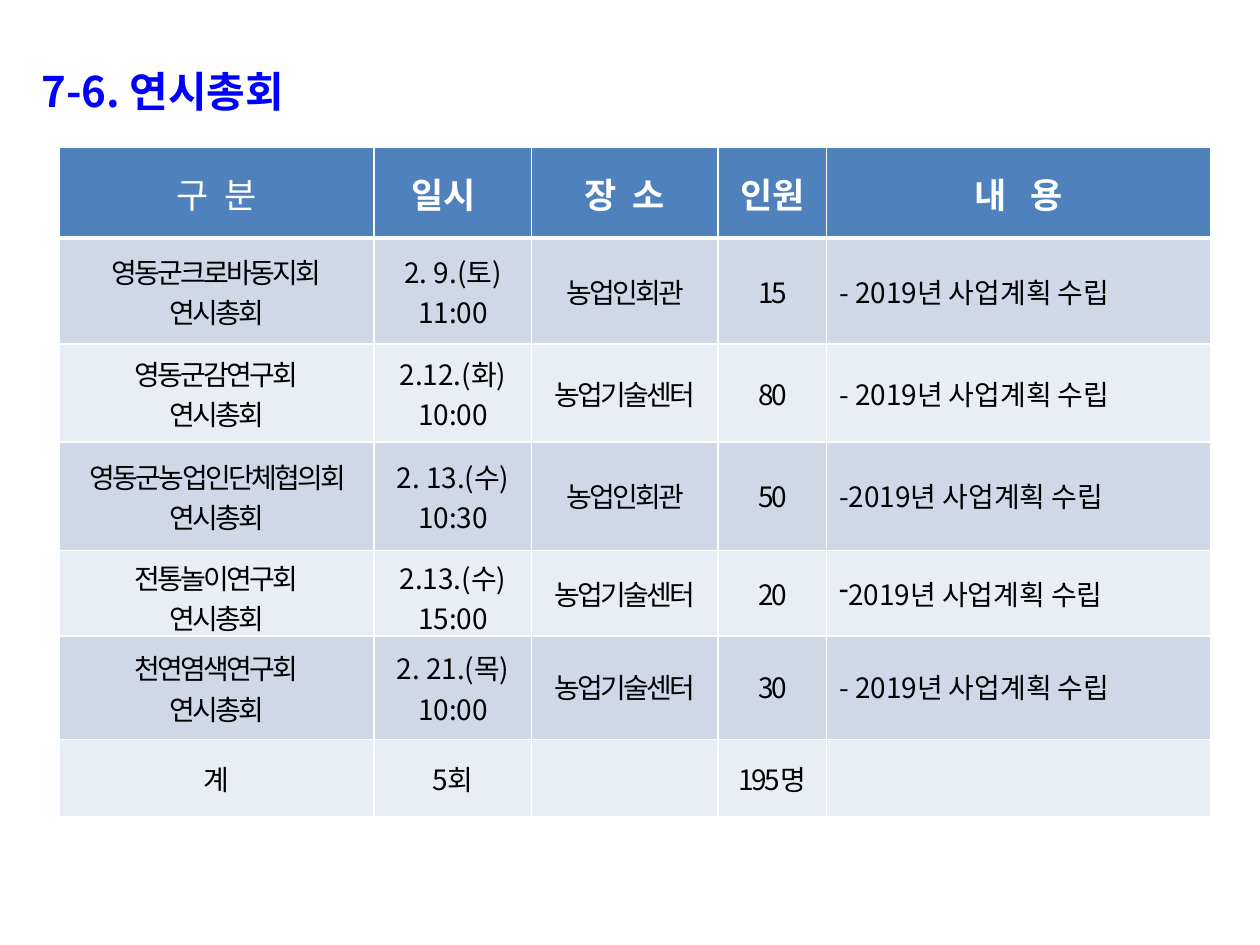
from lxml.etree import SubElement
from pptx import Presentation
from pptx.dml.color import RGBColor
from pptx.enum.text import MSO_ANCHOR, PP_ALIGN
from pptx.oxml.ns import qn
from pptx.util import Inches, Pt

FONT = "Noto Sans CJK KR"
COLUMN_WIDTHS = [2.5, 1.25, 1.48, 0.86, 3.05]
ROW_HEIGHTS = [0.72, 0.84, 0.78, 0.86, 0.68, 0.82, 0.61]
HEADER_FILL = "4F81BD"
BAND_FILLS = ["E9EDF4", "D0D8E8"]
TIGHT = -1.5
DATE_INDENT = 0.38
HALL, CENTER = "농업인회관", "농업기술센터"

# Text and letter spacing in points
HEADERS = [("구 분", 2.2), ("일시", 0), ("장 소", 2.2), ("인원", 0), ("내 용", 4.5)]

# Group, date, place, attendance, agenda, line spacing of the last three
MEETINGS = [
    ("영동군크로바동지회\n연시총회", "2. 9.(토)\n11:00", HALL, "15", "- 2019년 사업계획 수립", None),
    ("영동군감연구회\n연시총회", "2.12.(화)\n10:00", CENTER, "80", "- 2019년 사업계획 수립", None),
    ("영동군농업인단체협의회 연시총회", "2. 13.(수)\n10:30", HALL, "50", "-2019년 사업계획 수립", 0.9),
    ("전통놀이연구회\n연시총회", "2.13.(수)\n15:00", CENTER, "20", "2019년 사업계획 수립", None),
    ("천연염색연구회\n연시총회", "2. 21.(목)\n10:00", CENTER, "30", "- 2019년 사업계획 수립", 0.9),
]
BULLETED_MEETING = 4
TOTALS = ["계", "5회", "", "195명", ""]


def color(hex_value):
    return RGBColor.from_string(hex_value)


def write_text(frame, text, size=16, ink="000000", bold=False, align=PP_ALIGN.LEFT,
               letter_spacing=0, line_spacing=None, hanging=0, bullet=None):
    """Fill a text frame, one paragraph for each line of the text."""
    for index, line in enumerate(text.split("\n")):
        paragraph = frame.add_paragraph() if index else frame.paragraphs[0]
        paragraph.alignment = align
        if line_spacing:
            paragraph.line_spacing = line_spacing
        properties = paragraph._p.get_or_add_pPr()
        if hanging:
            properties.set("marL", str(Inches(hanging)))
            properties.set("indent", str(-Inches(hanging)))
        if bullet:
            SubElement(properties, qn("a:buChar"), char=bullet)
        run = paragraph.add_run()
        run.text = line
        font = run.font
        font.name, font.size, font.bold = FONT, Pt(size), bold
        font.color.rgb = color(ink)
        run_properties = run._r.get_or_add_rPr()
        run_properties.set("spc", str(round(letter_spacing * 100)))
        SubElement(run_properties, qn("a:ea"), typeface=FONT)


def style_cell(cell, fill, top=1, bottom=1):
    """Give a cell its fill and white borders, with widths in points."""
    properties = cell._tc.get_or_add_tcPr()
    for side, width in (("L", 1), ("R", 1), ("T", top), ("B", bottom)):
        line = SubElement(properties, qn(f"a:ln{side}"), w=str(Pt(width)))
        SubElement(SubElement(line, qn("a:solidFill")), qn("a:srgbClr"), val="FFFFFF")
    cell.fill.solid()
    cell.fill.fore_color.rgb = color(fill)
    cell.vertical_anchor = MSO_ANCHOR.MIDDLE


def add_title(slide, text):
    box = slide.shapes.add_textbox(Inches(0.23), Inches(0.39), Inches(9.45), Inches(0.55))
    box.text_frame.word_wrap = False
    write_text(box.text_frame, text, size=24, ink="0000FF", bold=True,
               line_spacing=1.2, hanging=0.58)


def add_schedule_table(slide):
    frame = slide.shapes.add_table(
        len(ROW_HEIGHTS), len(COLUMN_WIDTHS), Inches(0.47), Inches(1.17),
        Inches(sum(COLUMN_WIDTHS)), Inches(sum(ROW_HEIGHTS)))
    table = frame.table
    for column, width in zip(table.columns, COLUMN_WIDTHS):
        column.width = Inches(width)
    for index, (row, height) in enumerate(zip(table.rows, ROW_HEIGHTS)):
        row.height = Inches(height)
        for cell in row.cells:
            style_cell(cell, BAND_FILLS[index % 2] if index else HEADER_FILL,
                       top=3 if index == 1 else 1, bottom=1 if index else 3)
    return table


def fill_header(table):
    for column, (text, spacing) in enumerate(HEADERS):
        write_text(table.cell(0, column).text_frame, text, size=20, ink="FFFFFF",
                   bold=column > 0, align=PP_ALIGN.CENTER, letter_spacing=spacing)
    table.cell(0, 1).margin_right = Inches(0.25)


def fill_meeting(table, row, meeting):
    group, date, place, attendance, agenda, line_spacing = meeting
    group_frame, date_frame, place_frame, attendance_frame, agenda_frame = (
        cell.text_frame for cell in table.rows[row].cells)
    centered = {"align": PP_ALIGN.CENTER}
    write_text(group_frame, group, letter_spacing=TIGHT, **centered)
    write_text(date_frame, date, hanging=DATE_INDENT, **centered)
    for frame, text in ((place_frame, place), (attendance_frame, attendance)):
        write_text(frame, text, letter_spacing=TIGHT, line_spacing=line_spacing, **centered)
    write_text(agenda_frame, agenda, line_spacing=line_spacing,
               bullet="-" if row == BULLETED_MEETING else None)


def fill_totals(table):
    for column, text in enumerate(TOTALS):
        if text:
            write_text(table.cell(len(ROW_HEIGHTS) - 1, column).text_frame, text,
                       align=PP_ALIGN.CENTER, letter_spacing=0 if column == 1 else TIGHT)


def main():
    presentation = Presentation()
    presentation.slide_width, presentation.slide_height = Inches(10), Inches(7.5)
    slide = presentation.slides.add_slide(presentation.slide_layouts[6])
    add_title(slide, "7-6. 연시총회")
    table = add_schedule_table(slide)
    fill_header(table)
    for row, meeting in enumerate(MEETINGS, start=1):
        fill_meeting(table, row, meeting)
    fill_totals(table)
    presentation.save("out.pptx")


if __name__ == "__main__":
    main()
